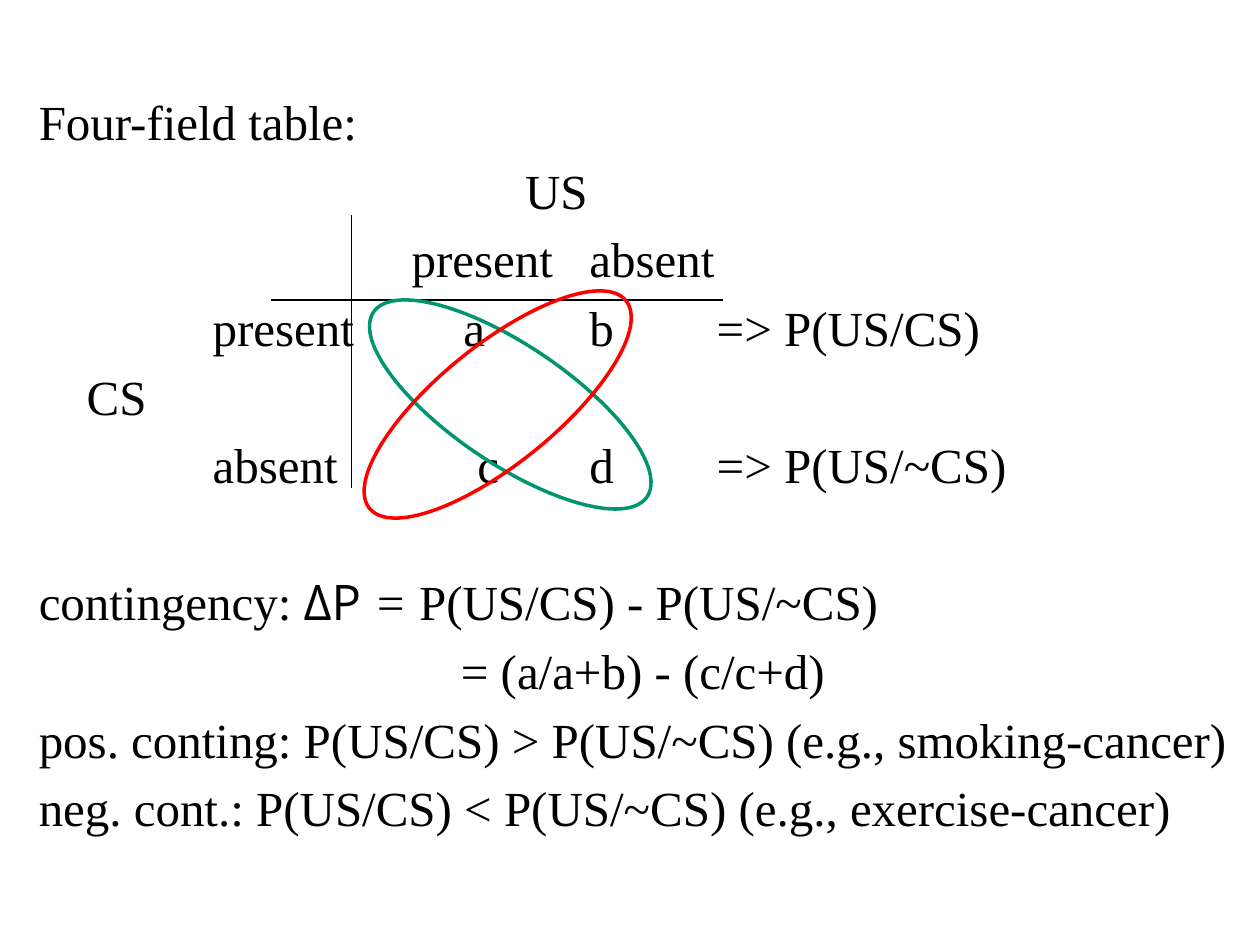
from dataclasses import dataclass

from lxml import etree
from pptx import Presentation
from pptx.dml.color import RGBColor as RGB
from pptx.enum.shapes import MSO_CONNECTOR as Link, MSO_SHAPE as Shape
from pptx.oxml.ns import qn
from pptx.util import Inches, Pt


@dataclass
class Theme:
    ink: RGB = RGB(0, 0, 0)
    green: RGB = RGB(0x00, 0x95, 0x6F)
    red: RGB = RGB(0xFF, 0, 0)
    size: float = 28
    line: float = 33.6
    gap: float = 5.6
    serif: str = "Times New Roman"
    sans: str = "Open Sans"


theme = Theme()


def write(para, text, font=theme.serif, italic=False):
    run = para.add_run()
    run.text = text
    run.font.name = font
    run.font.size = Pt(theme.size)
    run.font.italic = italic
    run.font.color.rgb = theme.ink


def set_tabs(para, stops):
    tabs = etree.SubElement(para._p.get_or_add_pPr(), qn("a:tabLst"))
    for stop in stops:
        etree.SubElement(tabs, qn("a:tab"), pos=str(Inches(stop)), algn="l")


deck = Presentation()
deck.slide_width, deck.slide_height = Inches(10), Inches(7.5)
slide = deck.slides.add_slide(deck.slide_layouts[6])
shapes = slide.shapes

# Text lines: tab stops in inches, then the runs
lines = [
    ([], ["Four-field table:"]),
    ([3.86], ["\tUS"]),
    ([2.96, 4.37], ["\tpresent\tabsent"]),
    ([1.38, 3.37, 4.37, 5.38], ["\tpresent\ta\tb\t=> P(US/CS)"]),
    ([0.38], ["\tCS"]),
    ([1.38, 3.48, 4.37, 5.38], ["\tabsent\tc\td\t=> P(US/~CS)"]),
    ([], ["contingency: ", ("ΔP ", theme.sans), ("= ", theme.serif, True),
          "P(US/CS) - P(US/~CS)"]),
    ([3.35], ["\t= (a/a+b) - (c/c+d)"]),
    ([], ["pos. conting: P(US/CS) > P(US/~CS) (e.g., smoking-cancer)"]),
    ([], ["neg. cont.: P(US/CS) < P(US/~CS) (e.g., exercise-cancer)"]),
]
box = shapes.add_textbox(Inches(0.21), Inches(0.68), Inches(9.67), Inches(6.33))
frame = box.text_frame
frame.word_wrap = True
for i, (stops, runs) in enumerate(lines):
    para = frame.add_paragraph() if i else frame.paragraphs[0]
    para.line_spacing = Pt(theme.line)
    if i:
        para.space_before = Pt(theme.gap)
    if runs[0].startswith("contingency"):
        # One line of air between the table and the formulas
        para.space_before = Pt(theme.line + 2 * theme.gap)
    if stops:
        set_tabs(para, stops)
    for run in runs:
        write(para, *([run] if isinstance(run, str) else run))

# Table rules
for ends in [(2.15, 2.38, 5.74, 2.38), (2.79, 1.71, 2.79, 3.87)]:
    rule = shapes.add_connector(Link.STRAIGHT, *map(Inches, ends))
    rule.line.color.rgb = theme.ink
    rule.line.width = Pt(0.75)
    etree.SubElement(rule._element.spPr, qn("a:effectLst"))

# Ovals around the two diagonals
for left, turn, color in [(2.74, 34, theme.green), (2.64, 141, theme.red)]:
    oval = shapes.add_shape(
        Shape.OVAL, Inches(left), Inches(2.74), Inches(2.62), Inches(0.94))
    oval.rotation = turn
    oval.shadow.inherit = False
    oval.fill.background()
    oval.line.color.rgb = color
    oval.line.width = Pt(2)

deck.save("out.pptx")
